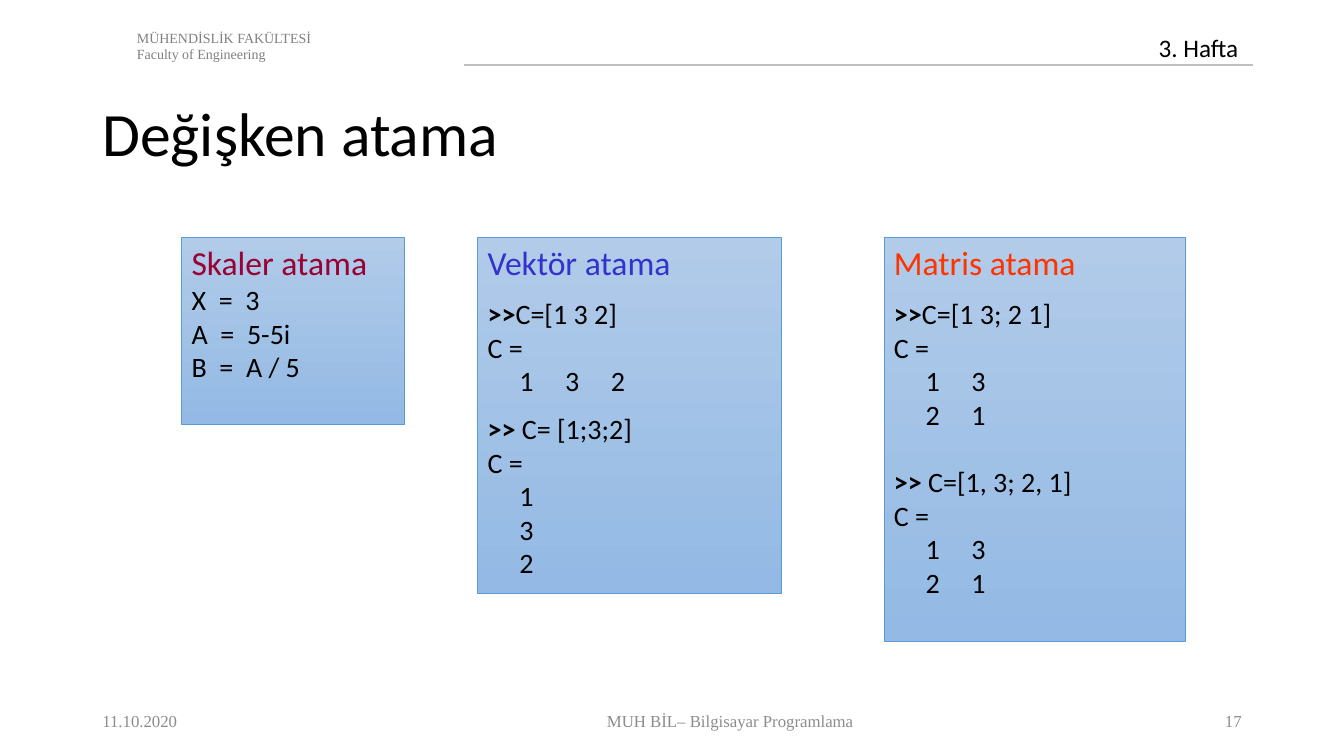
from lxml import etree
from pptx import Presentation
from pptx import util as u
from pptx.dml.color import RGBColor
from pptx.enum import shapes, text
from pptx.oxml.ns import qn

PX = 9525
COLORS = {
    "black": "000000", "faculty": "808080", "footer": "8C8C8C", "rule": "BFBFBF",
    "top": "B1CBE9", "bottom": "93B9E4", "border": "5B9BD5",
    "scalar": "990033", "vector": "3333CC", "matrix": "FF3300",
}
SANS, SERIF = "Calibri", "Times New Roman"
PROMPT = ">>"

PANELS = [
    ((173, 226, 212, 178), "Skaler atama", "scalar",
     [("X  =  3", 0), ("A  =  5-5i", 0), ("B  =  A / 5", 0)]),
    ((455, 226, 289, 339), "Vektör atama", "vector",
     [(">>C=[1 3 2]", 10), ("C =", 0), ("     1     3     2", 0),
      (">> C= [1;3;2]", 10), ("C =", 0), ("     1", 0), ("     3", 0), ("     2", 0)]),
    ((842, 226, 287, 385), "Matris atama", "matrix",
     [(">>C=[1 3; 2 1]", 10), ("C =", 0), ("     1     3", 0), ("     2     1", 0),
      (">> C=[1, 3; 2, 1]", 24), ("C =", 0), ("     1     3", 0), ("     2     1", 0)]),
]


def rgb(name):
    return RGBColor.from_string(COLORS[name])


def scaled(box):
    return [u.Emu(v * PX) for v in box]


def apply(obj, values):
    for name, value in values.items():
        setattr(obj, name, value)


def add_run(p, words, size, color, font=SANS, bold=False):
    r = p.add_run()
    r.text = words
    apply(r.font, {"size": u.Pt(size), "name": font, "bold": bold})
    r.font.color.rgb = rgb(color)


def add_label(slide, box, lines, size, color, font, align="LEFT", anchor="TOP"):
    tf = slide.shapes.add_textbox(*scaled(box)).text_frame
    apply(tf, {"word_wrap": True, "vertical_anchor": text.MSO_ANCHOR[anchor]})
    for i, line in enumerate(lines):
        p = tf.add_paragraph() if i else tf.paragraphs[0]
        p.alignment = text.PP_ALIGN[align]
        add_run(p, line, size, color, font)


def add_header(slide, box):
    x, y, w, h = box
    rule = slide.shapes.add_connector(
        shapes.MSO_CONNECTOR.STRAIGHT, *scaled((x + 354, y + h, x + w, y + h)))
    rule.line.color.rgb = rgb("rule")
    rule.line.width = u.Pt(1.5)
    etree.SubElement(rule._element.spPr, qn("a:effectLst"))
    add_label(slide, (x + 33, y, 640, 42),
              ["MÜHENDİSLİK FAKÜLTESİ", "Faculty of Engineering"], 10, "faculty", SERIF)
    add_label(slide, (x + w - 99, y + 3, 98, 38), ["3. Hafta"], 18, "black", SANS)


def add_title(slide, box):
    title = slide.shapes.title
    apply(title, dict(zip(("left", "top", "width", "height"), scaled(box))))
    tf = title.text_frame
    apply(tf, {"word_wrap": True, "auto_size": text.MSO_AUTO_SIZE.NONE,
               "vertical_anchor": text.MSO_ANCHOR.TOP})
    p = tf.paragraphs[0]
    apply(p, {"alignment": text.PP_ALIGN.LEFT, "line_spacing": 0.9})
    add_run(p, "Değişken atama", 44, "black")


def add_panel(slide, box, heading, color, lines):
    sp = slide.shapes.add_shape(shapes.MSO_SHAPE.RECTANGLE, *scaled(box))
    sp.shadow.inherit = False
    sp.fill.gradient()
    sp.fill.gradient_angle = 270
    for stop, name in zip(sp.fill.gradient_stops, ("top", "bottom")):
        stop.color.rgb = rgb(name)
    sp.line.color.rgb = rgb("border")
    sp.line.width = u.Pt(0.5)
    tf = sp.text_frame
    apply(tf, {"word_wrap": True, "vertical_anchor": text.MSO_ANCHOR.TOP})
    p = tf.paragraphs[0]
    p.alignment = text.PP_ALIGN.LEFT
    add_run(p, heading, 24, color)
    for line, gap in lines:
        p = tf.add_paragraph()
        apply(p, {"alignment": text.PP_ALIGN.LEFT, "space_before": u.Pt(gap)})
        if line.startswith(PROMPT):
            add_run(p, PROMPT, 20, "black", bold=True)
            line = line[len(PROMPT):]
        add_run(p, line, 20, "black")


def add_footer(slide, box):
    x, y, w, h = box
    for left, width, words, align in (
            (x, 151, "11.10.2020", "LEFT"),
            (x + 174, 867, "MUH BİL– Bilgisayar Programlama", "CENTER"),
            (x + w - 43, 43, "17", "RIGHT")):
        add_label(slide, (left, y, width, h), [words], 12, "footer", SERIF, align, "MIDDLE")


def main():
    prs = Presentation()
    apply(prs, {"slide_width": u.Emu(1280 * PX), "slide_height": u.Emu(720 * PX)})
    slide = prs.slides.add_slide(prs.slide_layouts[5])
    add_header(slide, (88, 23, 1105, 39))
    add_title(slide, (88, 94, 1104, 84))
    for panel in PANELS:
        add_panel(slide, *panel)
    add_footer(slide, (88, 667, 1104, 38))
    prs.save("out.pptx")


if __name__ == "__main__":
    main()
